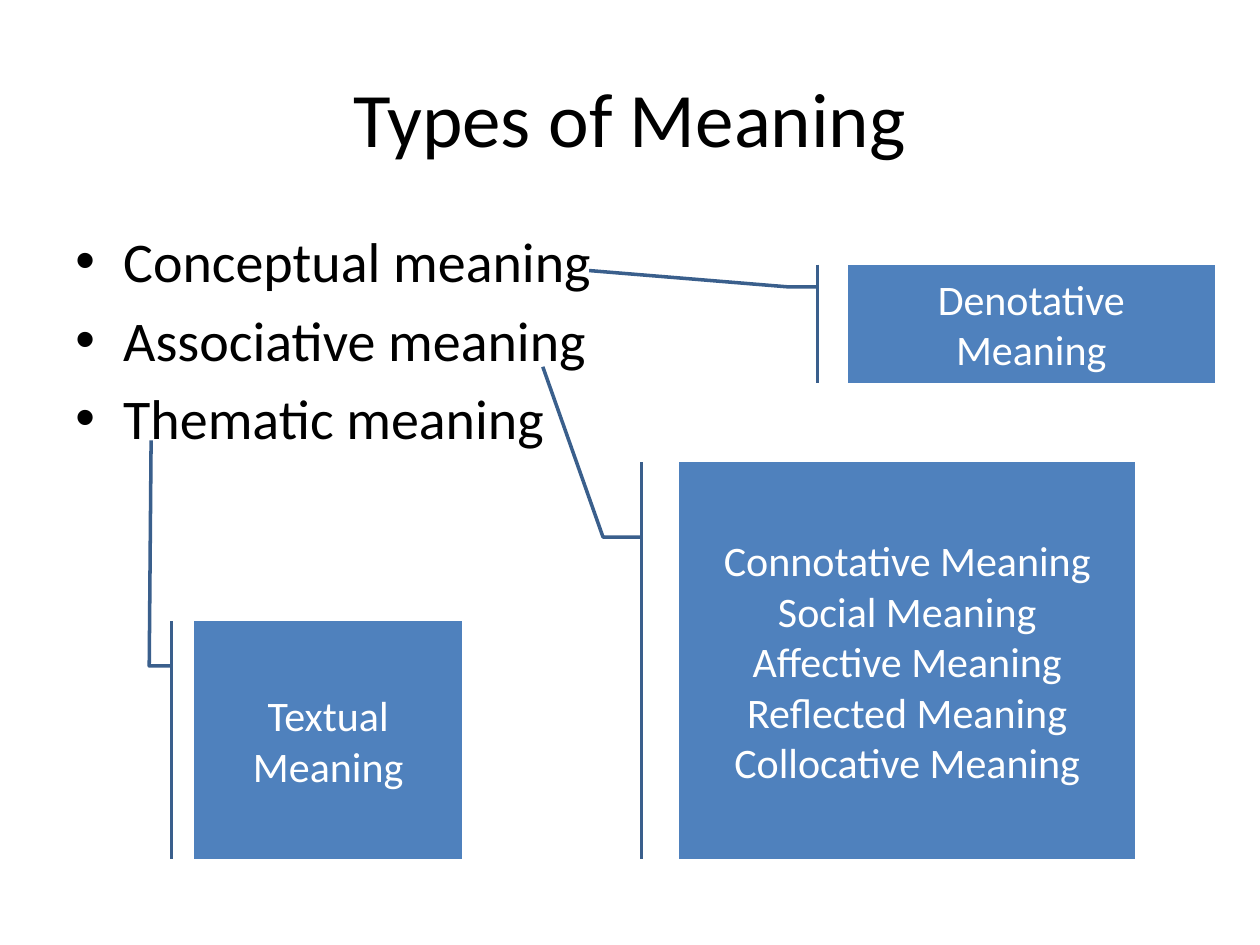
from lxml.etree import SubElement as Sub
from pptx import Presentation
from pptx.dml.color import RGBColor
from pptx.enum.shapes import MSO_SHAPE as Kind
from pptx.enum.text import MSO_ANCHOR as Anchor, PP_ALIGN as Align
from pptx.oxml.ns import qn
from pptx.util import Inches, Pt

HEAD = {"size": Pt(44), "name": "Calibri", "color": "000000"}
BODY = {**HEAD, "size": Pt(32)}
NOTE = {**HEAD, "size": Pt(24), "color": "FFFFFF"}

TYPES = ["Conceptual meaning", "Associative meaning", "Thematic meaning"]
NOTES = [
    ((6.73, 2.1, 2.91, 0.94), (0.051, -0.706), ["Denotative Meaning"]),
    ((5.39, 3.67, 3.62, 3.15), (-0.241, -0.299),
     ["Connotative Meaning", "Social Meaning", "Affective Meaning",
      "Reflected Meaning", "Collocative Meaning"]),
    ((1.54, 4.93, 2.13, 1.89), (-0.759, -0.16), ["Textual Meaning"]),
]


def paint(part, color):
    part.rgb = RGBColor.from_string(color)


def style(font, form):
    for key, val in form.items():
        if key == "color":
            paint(font.color, val)
        else:
            setattr(font, key, val)


def write(frame, lines, form, align, anchor):
    frame.word_wrap = True
    frame.vertical_anchor = anchor
    for i, line in enumerate(lines):
        para = frame.paragraphs[0] if i == 0 else frame.add_paragraph()
        para.alignment = align
        run = para.add_run()
        run.text = line
        style(run.font, form)


def add_title(slide, box, text):
    title = slide.shapes.title
    for key, val in zip(("left", "top", "width", "height"), box):
        setattr(title, key, Inches(val))
    write(title.text_frame, [text], HEAD, Align.CENTER, Anchor.MIDDLE)


def add_list(slide, box, lines):
    frame = slide.shapes.add_textbox(*map(Inches, box)).text_frame
    write(frame, lines, BODY, Align.LEFT, Anchor.TOP)
    for para in frame.paragraphs:
        para.space_before = Pt(6.4)
        props = para._p.get_or_add_pPr()
        props.set("marL", str(Inches(0.38)))
        props.set("indent", str(-Inches(0.38)))
        Sub(props, qn("a:buFont"), typeface="Arial")
        Sub(props, qn("a:buChar"), char="•")


def add_note(slide, box, tip, lines):
    note = slide.shapes.add_shape(
        Kind.LINE_CALLOUT_2_ACCENT_BAR, *map(Inches, box))
    for i, val in enumerate((0.188, -0.083, 0.188, -0.167, *tip)):
        note.adjustments[i] = val
    note.shadow.inherit = False
    note.fill.solid()
    paint(note.fill.fore_color, "4F81BD")
    paint(note.line.color, "3A5F8C")
    note.line.width = Pt(2)
    write(note.text_frame, lines, NOTE, Align.CENTER, Anchor.MIDDLE)


def main():
    deck = Presentation()
    deck.slide_width, deck.slide_height = Inches(10), Inches(7.5)
    slide = deck.slides.add_slide(deck.slide_layouts[5])
    add_title(slide, (0.5, 0.3, 9, 1.25), "Types of Meaning")
    add_list(slide, (0.5, 1.75, 9, 4.95), TYPES)
    for box, tip, lines in NOTES:
        add_note(slide, box, tip, lines)
    deck.save("out.pptx")


if __name__ == "__main__":
    main()
